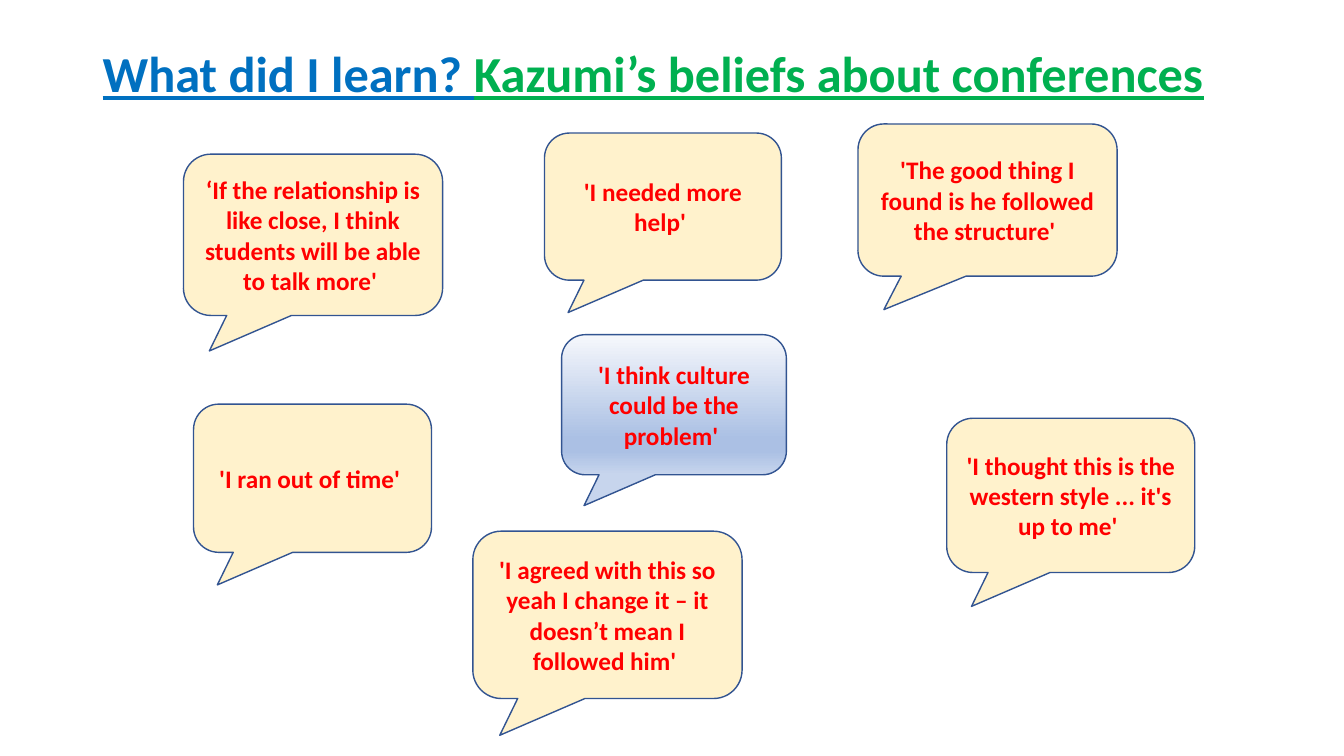
from copy import deepcopy

from pptx import Presentation
from pptx.dml.color import RGBColor
from pptx.enum.shapes import MSO_SHAPE as Preset
from pptx.enum.text import MSO_ANCHOR as Anchor, PP_ALIGN as Align
from pptx.util import Pt

# Content
BLUE = RGBColor(0x00, 0x70, 0xC0)
GREEN = RGBColor(0x00, 0xB0, 0x50)
RED = RGBColor(0xFF, 0x00, 0x00)
CREAM = RGBColor(0xFF, 0xF2, 0xCC)
OUTLINE = RGBColor(0x32, 0x54, 0x91)
PALE_BLUE = RGBColor(0xF6, 0xF8, 0xFC)
MID_BLUE = RGBColor(0xAB, 0xC0, 0xE4)
SOFT_BLUE = RGBColor(0xC7, 0xD5, 0xED)

GRADIENT = [(0, PALE_BLUE), (0.74, MID_BLUE), (0.83, MID_BLUE), (1, SOFT_BLUE)]

TITLE_BOX = (92, 40, 1150, 72)
TITLE = [("What did I learn? ", BLUE), ("Kazumi’s beliefs about conferences", GREEN)]

# Quote, (left, top, width, height) in px, fill
QUOTES = [
    ("'I think culture could be the problem' ", (557, 332, 223, 139), GRADIENT),
    ("‘If the relationship is like close, I think students will be able to talk more' ",
     (182, 153, 257, 160), CREAM),
    ("'The good thing I found is he followed the structure' ", (851, 123, 257, 151), CREAM),
    ("'I ran out of time' ", (192, 401, 236, 147), CREAM),
    ("'I agreed with this so yeah I change it – it doesn’t mean I followed him' ",
     (469, 527, 267, 166), CREAM),
    ("'I thought this is the western style ... it's up to me' ", (939, 415, 246, 153), CREAM),
    ("'I needed more help' ", (540, 132, 235, 146), CREAM),
]
TAIL_AND_CORNER = (-0.4, 0.72, 0.17)

EMU_PER_PX = 9144  # 100 px to the inch


def scaled(box):
    return [length * EMU_PER_PX for length in box]


def write(shape, runs, *, size, align=Align.LEFT, underline=False, spacing=1.0):
    frame = shape.text_frame
    frame.word_wrap = True
    frame.vertical_anchor = Anchor.MIDDLE
    paragraph = frame.paragraphs[0]
    paragraph.alignment = align
    paragraph.line_spacing = spacing
    for text, color in runs:
        run = paragraph.add_run()
        run.text = text
        run.font.name = "Calibri"
        run.font.size = Pt(size)
        run.font.bold = True
        run.font.underline = underline
        run.font.color.rgb = color


def fill_gradient(fill, stops):
    fill.gradient()
    fill.gradient_angle = 270  # counter-clockwise, so top to bottom
    stop_list = fill._fill._gradFill.gsLst
    while len(stop_list) < len(stops):
        stop_list.append(deepcopy(stop_list[0]))
    for stop, (position, color) in zip(fill.gradient_stops, stops):
        stop.position = position
        stop.color.rgb = color


def add_callout(slide, quote, box, fill):
    callout = slide.shapes.add_shape(Preset.ROUNDED_RECTANGULAR_CALLOUT, *scaled(box))
    callout.shadow.inherit = False
    for index, value in enumerate(TAIL_AND_CORNER):
        callout.adjustments[index] = value
    if fill is GRADIENT:
        fill_gradient(callout.fill, fill)
    else:
        callout.fill.solid()
        callout.fill.fore_color.rgb = fill
    callout.line.color.rgb = OUTLINE
    callout.line.width = Pt(1)
    write(callout, [(quote, RED)], size=18, align=Align.CENTER)


def main():
    presentation = Presentation()
    presentation.slide_width, presentation.slide_height = scaled((1333, 750))
    slide = presentation.slides.add_slide(presentation.slide_layouts[6])

    # Title
    title = slide.shapes.add_textbox(*scaled(TITLE_BOX))
    write(title, TITLE, size=36, underline=True, spacing=0.9)

    # Speech bubbles
    for quote, box, fill in QUOTES:
        add_callout(slide, quote, box, fill)

    presentation.save("out.pptx")


if __name__ == "__main__":
    main()
